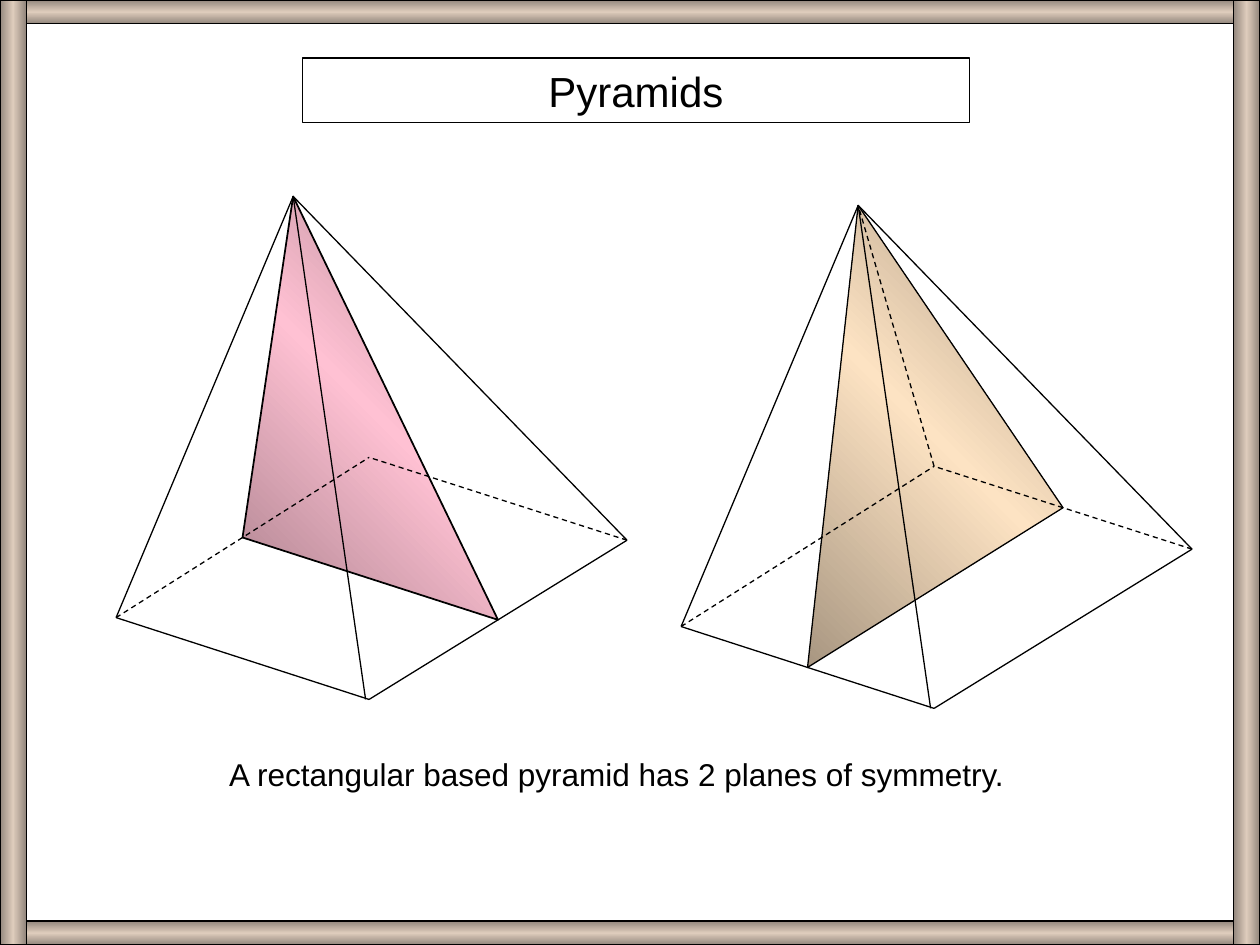
from copy import deepcopy
from typing import NamedTuple

from pptx import Presentation
from pptx.dml.color import RGBColor
from pptx.enum.dml import MSO_LINE
from pptx.enum.shapes import MSO_CONNECTOR, MSO_SHAPE
from pptx.enum.text import MSO_ANCHOR, PP_ALIGN
from pptx.oxml.ns import qn
from pptx.util import Cm, Pt
from lxml.etree import SubElement

WIDTH, HEIGHT = 25.4, 19.05
BLACK = "000000"


class Point(NamedTuple):
    x: float
    y: float


class Shades(NamedTuple):
    dark: str
    light: str


class Bar(NamedTuple):
    left: float
    top: float
    width: float
    height: float
    angle: int


class Pyramid(NamedTuple):
    apex: Point
    left: Point
    front: Point
    right: Point
    back: Point


def color(value: str) -> RGBColor:
    return RGBColor.from_string(value)


def shifted(pyramid: Pyramid, across: float, down: float) -> Pyramid:
    return Pyramid(*(Point(p.x + across, p.y + down) for p in pyramid))


def midpoint(a: Point, b: Point) -> Point:
    return Point((a.x + b.x) / 2, (a.y + b.y) / 2)


def set_outline(shape, points: float = 0.75) -> None:
    shape.line.color.rgb = color(BLACK)
    shape.line.width = Pt(points)


def fill_gradient(shape, shades: Shades, angle: int) -> None:
    """Fill from dark through light and back to dark."""
    shape.fill.gradient()
    stop_list = shape._element.spPr.find(qn("a:gradFill")).find(qn("a:gsLst"))
    stop_list.append(deepcopy(stop_list[-1]))
    colors = (shades.dark, shades.light, shades.dark)
    for index, stop in enumerate(shape.fill.gradient_stops):
        stop.position = index / 2
        stop.color.rgb = color(colors[index])
    shape.fill.gradient_angle = angle


def draw_edge(slide, start: Point, end: Point, dashed: bool = False) -> None:
    edge = slide.shapes.add_connector(
        MSO_CONNECTOR.STRAIGHT, Cm(start.x), Cm(start.y), Cm(end.x), Cm(end.y))
    set_outline(edge)
    if dashed:
        edge.line.dash_style = MSO_LINE.DASH
    SubElement(edge._element.spPr, qn("a:effectLst"))


def draw_plane(slide, corners: list[Point], shades: Shades, outline: float) -> None:
    first, *others = [(Cm(p.x), Cm(p.y)) for p in corners]
    builder = slide.shapes.build_freeform(*first)
    builder.add_line_segments(others, close=True)
    plane = builder.convert_to_shape()
    plane.shadow.inherit = False
    fill_gradient(plane, shades, 45)
    set_outline(plane, outline)


def draw_pyramid(slide, pyramid: Pyramid) -> None:
    apex, left, front, right, back = pyramid
    for start, end in ((right, apex), (Point(front.x - 0.07, front.y), apex),
                       (left, apex), (left, front), (front, right)):
        draw_edge(slide, start, end)
    for corner in (left, right):
        draw_edge(slide, corner, back, dashed=True)


def write_text(shape, text: str, size: int, alignment: PP_ALIGN) -> None:
    frame = shape.text_frame
    frame.word_wrap = True
    para = frame.paragraphs[0]
    para.text = text
    para.alignment = alignment
    para.font.name = "Arial"
    para.font.size = Pt(size)
    para.font.color.rgb = color(BLACK)


def add_rectangle(slide, left: float, top: float, width: float, height: float):
    box = slide.shapes.add_shape(
        MSO_SHAPE.RECTANGLE, Cm(left), Cm(top), Cm(width), Cm(height))
    box.shadow.inherit = False
    set_outline(box)
    return box


def draw_frame(slide) -> None:
    thin, thick = 0.48, 0.53
    bars = (
        Bar(0, 0, WIDTH, thin, 90),
        Bar(0, HEIGHT - thin, WIDTH, thin, 90),
        Bar(0, 0, thick, HEIGHT, 0),
        Bar(WIDTH - thick, 0, thick, HEIGHT, 0),
    )
    for bar in bars:
        box = add_rectangle(slide, bar.left, bar.top, bar.width, bar.height)
        fill_gradient(box, Shades("93877D", "DECCBC"), bar.angle)


def main() -> None:
    deck = Presentation()
    deck.slide_width, deck.slide_height = Cm(WIDTH), Cm(HEIGHT)
    slide = deck.slides.add_slide(deck.slide_layouts[6])

    first = Pyramid(Point(5.91, 3.96), Point(2.34, 12.45), Point(7.44, 14.1),
                    Point(12.64, 10.89), Point(7.44, 9.22))
    second = shifted(first, 11.39, 0.18)

    draw_plane(slide, [first.apex, midpoint(first.left, first.back),
                       midpoint(first.front, first.right)],
               Shades("A9808C", "FFC1D3"), 1)
    draw_pyramid(slide, first)

    draw_plane(slide, [second.apex, midpoint(second.left, second.front),
                       midpoint(second.back, second.right)],
               Shades("A89681", "FDE3C3"), 0.75)
    draw_pyramid(slide, second)
    draw_edge(slide, second.back, second.apex, dashed=True)

    heading = add_rectangle(slide, 6.1, 1.17, 13.44, 1.3)
    heading.fill.background()
    heading.text_frame.vertical_anchor = MSO_ANCHOR.MIDDLE
    write_text(heading, "Pyramids", 24, PP_ALIGN.CENTER)

    caption = slide.shapes.add_textbox(Cm(4.37), Cm(15.09), Cm(18.75), Cm(1.02))
    write_text(caption, "A rectangular based pyramid has 2 planes of symmetry.",
               18, PP_ALIGN.LEFT)

    draw_frame(slide)
    deck.save("out.pptx")


if __name__ == "__main__":
    main()
